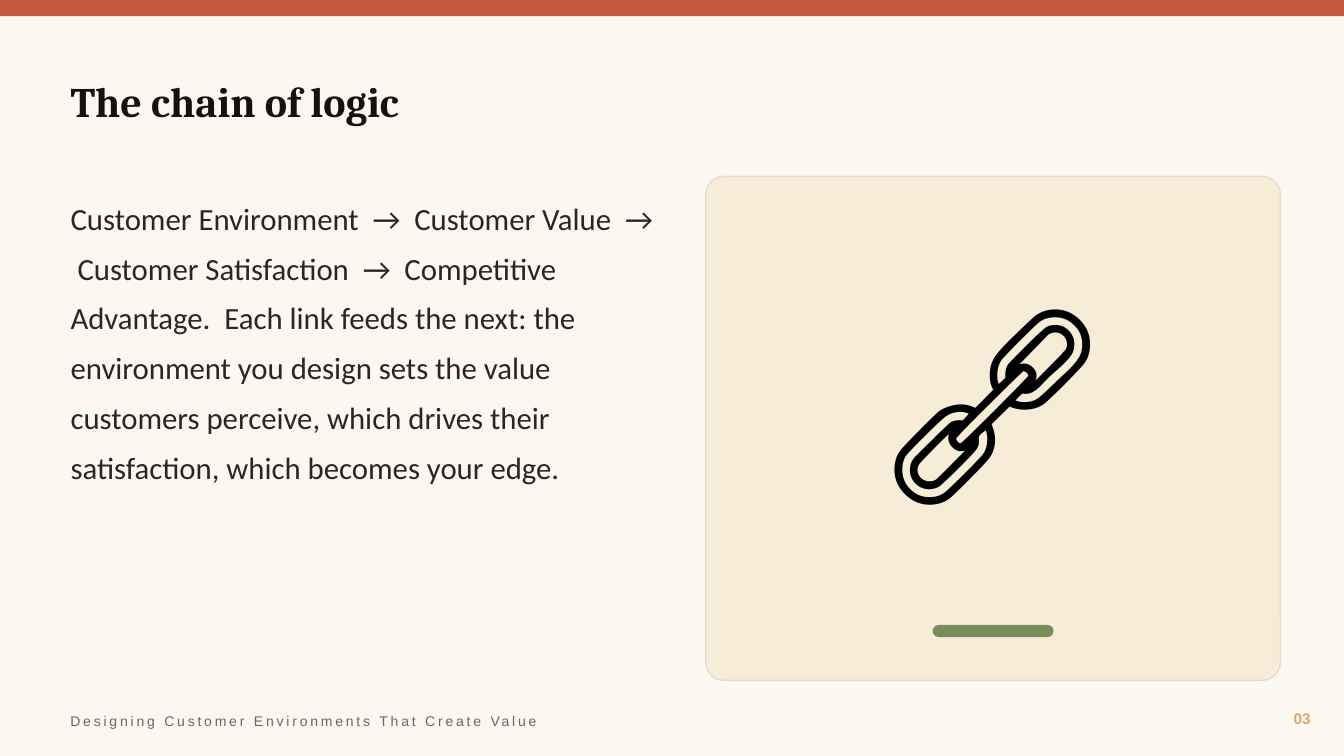
from lxml import etree
from pptx import Presentation
from pptx.dml.color import RGBColor
from pptx.enum.shapes import MSO_SHAPE
from pptx.enum.text import MSO_ANCHOR, MSO_AUTO_SIZE, PP_ALIGN
from pptx.oxml.ns import qn
from pptx.util import Emu, Pt

PX = 9144
WIDTH, HEIGHT = 1333, 750
MARGIN = 60
RECT, ROUNDED = MSO_SHAPE.RECTANGLE, MSO_SHAPE.ROUNDED_RECTANGLE
TOP, MIDDLE = MSO_ANCHOR.TOP, MSO_ANCHOR.MIDDLE
LEFT, CENTER, RIGHT = PP_ALIGN.LEFT, PP_ALIGN.CENTER, PP_ALIGN.RIGHT
NO_AUTOFIT = MSO_AUTO_SIZE.NONE


def px(length):
    return Emu(length * PX)


def paint(target, color):
    if hasattr(target, "solid"):
        target.solid()
        target = target.fore_color
    target.rgb = RGBColor.from_string(color)


def add_panel(slide, box, color, kind=RECT, corner=None, border=None):
    panel = slide.shapes.add_shape(kind, *map(px, box))
    panel.shadow.inherit = False
    paint(panel.fill, color)
    if corner is not None:
        panel.adjustments[0] = corner
    if border:
        paint(panel.line.fill, border)
        panel.line.width = Pt(1)
    else:
        panel.line.fill.background()


def write(slide, box, text, holder=None, size=10, font="Arial", color="000000",
          bold=False, align=LEFT, anchor=MIDDLE, line_spacing=1, tracking=0):
    holder = holder or slide.shapes.add_textbox(*map(px, box))
    holder.left, holder.top, holder.width, holder.height = map(px, box)
    frame = holder.text_frame
    frame.word_wrap = True
    frame.auto_size = NO_AUTOFIT
    frame.vertical_anchor = anchor
    paragraph = frame.paragraphs[0]
    paragraph.alignment = align
    paragraph.line_spacing = line_spacing
    paragraph.space_before = Pt(0)
    properties = paragraph._p.get_or_add_pPr()
    properties.set("marL", "0")
    properties.set("indent", "0")
    etree.SubElement(properties, qn("a:buNone"))
    run = paragraph.add_run()
    run.text = text
    run.font.size = Pt(size)
    run.font.name = font
    run.font.bold = bold
    paint(run.font.color, color)
    if tracking:
        run._r.get_or_add_rPr().set("spc", str(tracking * 100))


def add_heading(slide, box):
    left, top, width, height = box
    add_panel(slide, (left, top, width, 16), "C45A3D")
    write(slide, (left + MARGIN, top + 50, 1210, height - 50),
          "The chain of logic", holder=slide.shapes.title,
          size=30, font="Cambria", color="16110D", bold=True)


def add_explanation(slide, box):
    write(slide, box,
          "Customer Environment  →  Customer Value  →  Customer Satisfaction  →  "
          "Competitive Advantage.  Each link feeds the next: the environment you "
          "design sets the value customers perceive, which drives their "
          "satisfaction, which becomes your edge.",
          holder=slide.placeholders[1], size=22, font="Calibri",
          color="2A2622", anchor=TOP, line_spacing=1.35)


def add_chain_card(slide, box):
    left, top, width, height = box
    accent_width = 120
    add_panel(slide, box, "F6ECD8", ROUNDED, 0.036, "E4DDD0")
    write(slide, (left, top, width, height - 90), "🔗",
          size=150, font="Calibri", align=CENTER)
    add_panel(slide, (left + (width - accent_width) // 2, top + height - 55,
                      accent_width, 12), "7A8C5C", ROUNDED, 0.5)


def add_footer(slide, box):
    left, top, width, height = box
    write(slide, (left + width - 90, top, 90, height), "03",
          size=11, color="D9A86C", bold=True, align=RIGHT)
    write(slide, (left, top + 5, 800, height - 5),
          "Designing Customer Environments That Create Value",
          color="6E665C", tracking=2)


def main():
    deck = Presentation()
    deck.slide_width, deck.slide_height = px(WIDTH), px(HEIGHT)
    slide = deck.slides.add_slide(deck.slide_layouts[1])
    paint(slide.background.fill, "FBF7F1")
    add_heading(slide, (0, 0, WIDTH, 150))
    add_chain_card(slide, (700, 175, 570, 500))
    add_explanation(slide, (MARGIN, 180, 600, 500))
    add_footer(slide, (MARGIN, 695, 1250, 35))
    deck.save("out.pptx")


if __name__ == "__main__":
    main()
